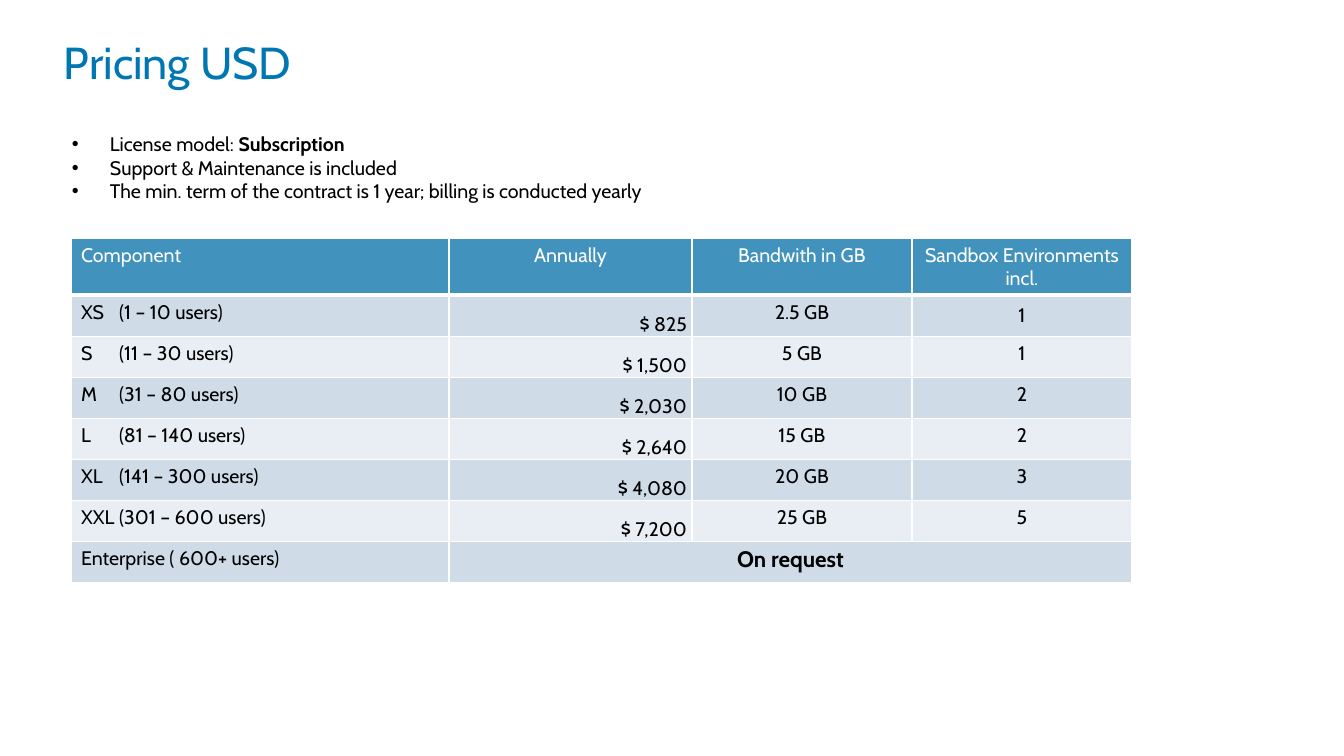
from lxml.etree import SubElement
from pptx import Presentation
from pptx.dml.color import RGBColor
from pptx.enum.text import MSO_ANCHOR, PP_ALIGN
from pptx.oxml.ns import qn
from pptx.util import Pt

EMU_PER_PX = 914400 / 100.8


def px(length):
    return round(length * EMU_PER_PX)


def color(hex_string):
    return RGBColor.from_string(hex_string)


class PricingSlide:
    FONT = "Cabin"
    TITLE, TEXT, WHITE = "0077B3", "000000", "FFFFFF"
    HEADER, BANDS = "4192BD", ("CFDCE8", "E9EEF4")

    def __init__(self, presentation):
        self.slide = presentation.slides.add_slide(presentation.slide_layouts[6])

    def style(self, paragraph, size, font_color, bold=False):
        font = paragraph.font
        font.name, font.size, font.bold = self.FONT, Pt(size), bold
        font.color.rgb = color(font_color)

    def text_frame(self, left, top, width, height):
        box = self.slide.shapes.add_textbox(px(left), px(top), px(width), px(height))
        box.text_frame.word_wrap = True
        return box.text_frame

    def title(self, text, *place):
        paragraph = self.text_frame(*place).paragraphs[0]
        paragraph.text = text
        paragraph.line_spacing = 0.9
        self.style(paragraph, 32, self.TITLE)

    def bullets(self, items, *place):
        frame = self.text_frame(*place)
        for index, (plain, strong) in enumerate(items):
            paragraph = frame.add_paragraph() if index else frame.paragraphs[0]
            properties = paragraph._p.get_or_add_pPr()
            properties.set("marL", str(px(38)))
            properties.set("indent", str(-px(38)))
            SubElement(properties, qn("a:buFont"), typeface="Arial")
            SubElement(properties, qn("a:buChar"), char="•")
            paragraph.add_run().text = plain
            if strong:
                run = paragraph.add_run()
                run.text = strong
                run.font.bold = True
            self.style(paragraph, 14, self.TEXT)

    def borders(self, cell, top=1, bottom=1):
        properties = cell._tc.get_or_add_tcPr()
        for side, width in (("L", 1), ("R", 1), ("T", top), ("B", bottom)):
            line = SubElement(properties, qn(f"a:ln{side}"), w=str(Pt(width)))
            fill = SubElement(line, qn("a:solidFill"))
            SubElement(fill, qn("a:srgbClr"), val=self.WHITE)

    def cell(self, cell, row, column, text):
        self.borders(cell, top=3 if row == 1 else 1, bottom=1 if row else 3)
        cell.fill.solid()
        cell.fill.fore_color.rgb = color(self.BANDS[(row - 1) % 2] if row else self.HEADER)
        paragraph = cell.text_frame.paragraphs[0]
        paragraph.text = text
        paragraph.alignment = PP_ALIGN.CENTER if column else PP_ALIGN.LEFT
        if "\t" in text:
            tabs = SubElement(paragraph._p.get_or_add_pPr(), qn("a:tabLst"))
            SubElement(tabs, qn("a:tab"), pos=str(px(38)), algn="l")
        if text.startswith("$"):
            paragraph.alignment = PP_ALIGN.RIGHT
            cell.vertical_anchor = MSO_ANCHOR.BOTTOM
            cell.margin_left = cell.margin_top = px(1)
            cell.margin_right, cell.margin_bottom = px(5), 0
        elif column == 3 and row < 2:
            cell.vertical_anchor = MSO_ANCHOR.MIDDLE
        request = cell.is_merge_origin
        self.style(paragraph, 16 if request else 14,
                   self.TEXT if row else self.WHITE, bold=request)

    def table(self, rows, left, top, widths, heights):
        table = self.slide.shapes.add_table(
            len(rows), len(widths), px(left), px(top),
            px(sum(widths)), px(sum(heights))).table
        table.first_row = table.horz_banding = False
        for column, width in zip(table.columns, widths):
            column.width = px(width)
        for row, height in zip(table.rows, heights):
            row.height = px(height)
        # The last row has one answer across all value columns
        last = len(rows) - 1
        table.cell(last, 1).merge(table.cell(last, len(widths) - 1))
        for row, texts in enumerate(rows):
            for column, text in enumerate(texts):
                self.cell(table.cell(row, column), row, column, text)


TERMS = [
    ("License model: ", "Subscription"),
    ("Support & Maintenance is included", ""),
    ("The min. term of the contract is 1 year; billing is conducted yearly", ""),
]
PRICES = [
    ("Component", "Annually", "Bandwith in GB", "Sandbox Environments incl."),
    ("XS\t(1 – 10 users)", "$ 825", "2.5 GB", "1"),
    ("S\t(11 – 30 users)", "$ 1,500", "5 GB", "1"),
    ("M\t(31 – 80 users)", "$ 2,030", "10 GB", "2"),
    ("L\t(81 – 140 users)", "$ 2,640", "15 GB", "2"),
    ("XL\t(141 – 300 users)", "$ 4,080", "20 GB", "3"),
    ("XXL\t(301 – 600 users)", "$ 7,200", "25 GB", "5"),
    ("Enterprise ( 600+ users)", "On request", "", ""),
]


def main():
    presentation = Presentation()
    presentation.slide_width, presentation.slide_height = px(1344), px(756)
    pricing = PricingSlide(presentation)

    # Heading and contract terms
    pricing.title("Pricing USD", 54, 36, 1235, 60)
    pricing.bullets(TERMS, 62, 127, 792, 82)

    # Price list
    pricing.table(PRICES, 71, 238, [378, 243, 220, 220], [57] + [41] * 7)

    presentation.save("out.pptx")


if __name__ == "__main__":
    main()
